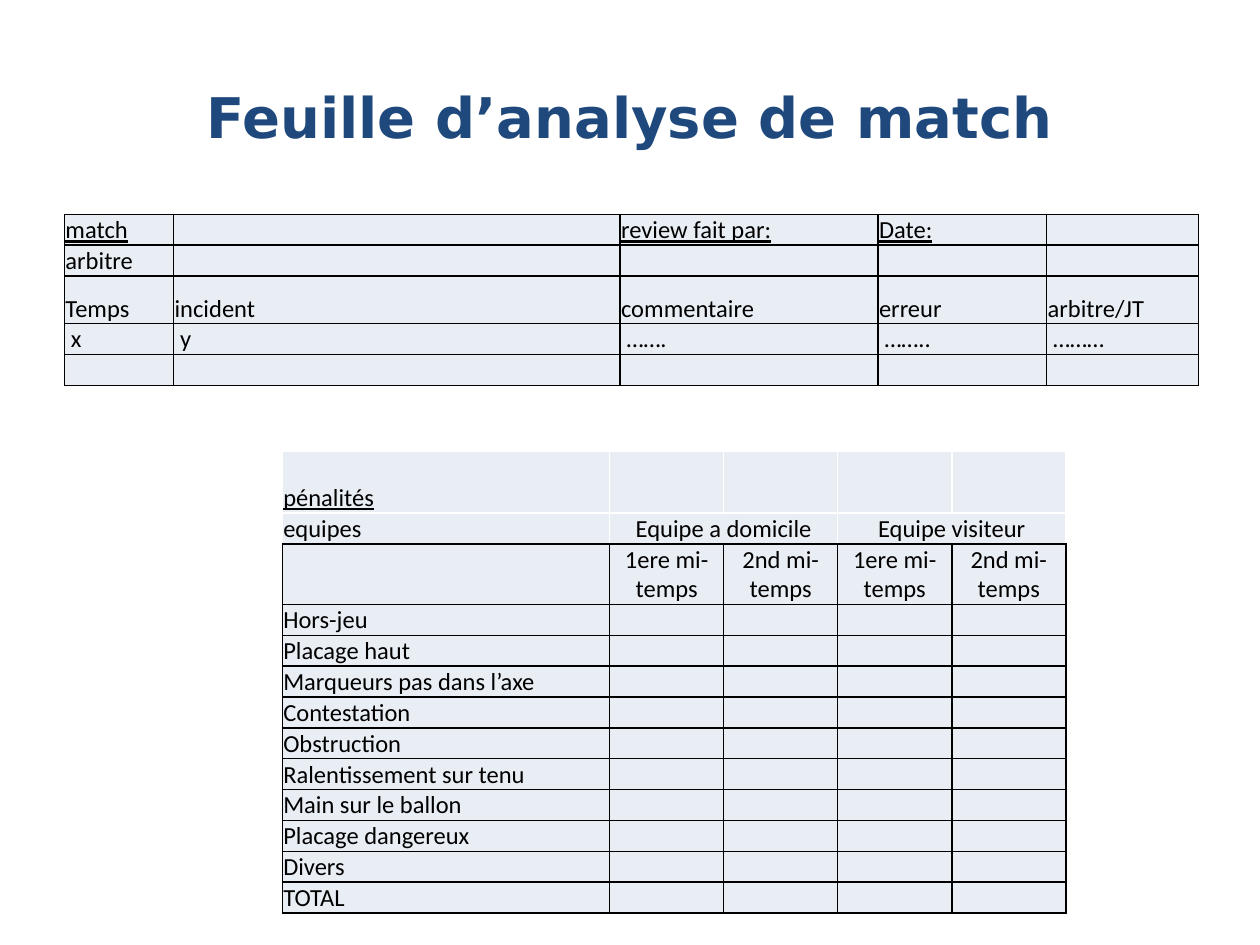
from dataclasses import dataclass

from lxml.etree import SubElement
from pptx import Presentation
from pptx.dml.color import RGBColor
from pptx.enum.text import MSO_ANCHOR, PP_ALIGN
from pptx.oxml.ns import qn
from pptx.util import Cm, Pt


@dataclass(frozen=True)
class Theme:
    """Colours, fonts and type sizes of the slide."""
    navy: str = "1F497D"
    black: str = "000000"
    white: str = "FFFFFF"
    cell: str = "E9EDF4"
    title_font: str = "DejaVu Sans"
    body_font: str = "Calibri"
    title_size: int = 32
    body_size: int = 14


THEME = Theme()
LINE_HEIGHT = 0.62
UNDERLINED = {"match", "review fait par:", "Date:", "pénalités"}

MATCH_ROWS = [
    ["match", "", "review fait par:", "Date:", ""],
    ["arbitre", "", "", "", ""],
    ["Temps", "incident", "commentaire", "erreur", "arbitre/JT"],
    [" x", " y", " …….", " ……..", " ………"],
    [""] * 5,
]
PENALTIES = [
    "Hors-jeu", "Placage haut", "Marqueurs pas dans l’axe", "Contestation",
    "Obstruction", "Ralentissement sur tenu", "Main sur le ballon",
    "Placage dangereux", "Divers", "TOTAL",
]
PENALTY_ROWS = [
    ["pénalités", "", "", "", ""],
    ["equipes", "Equipe a domicile", "", "Equipe visiteur", ""],
    [""] + ["1ere mi-temps", "2nd mi-temps"] * 2,
    *[[penalty, "", "", "", ""] for penalty in PENALTIES],
]


def write(frame, text, size=THEME.body_size, font=THEME.body_font,
          color=THEME.black, bold=False, underline=False, align=PP_ALIGN.LEFT):
    """Put one formatted paragraph in a text frame."""
    paragraph = frame.paragraphs[0]
    paragraph.alignment = align
    if not text:
        SubElement(paragraph._p, qn("a:endParaRPr"), sz=str(size * 100))
        return
    run = paragraph.add_run()
    run.text = text
    run.font.size = Pt(size)
    run.font.name = font
    run.font.bold = bold
    run.font.underline = underline
    run.font.color.rgb = RGBColor.from_string(color)


def draw_borders(cell, top, bottom, sides):
    """Give a cell one-point borders in the given colours."""
    properties = cell._tc.get_or_add_tcPr()
    for edge, color in zip("LRTB", (sides, sides, top, bottom)):
        line = SubElement(properties, qn(f"a:ln{edge}"), w=str(Pt(1)))
        fill = SubElement(line, qn("a:solidFill"))
        SubElement(fill, qn("a:srgbClr"), val=color)


def add_title(slide, text):
    """Place and fill the title placeholder."""
    title = slide.shapes.title
    title.left, title.top = Cm(1.27), Cm(0.76)
    title.width, title.height = Cm(22.86), Cm(3.18)
    title.text_frame.vertical_anchor = MSO_ANCHOR.MIDDLE
    write(title.text_frame, text, size=THEME.title_size, font=THEME.title_font,
          color=THEME.navy, bold=True, align=PP_ALIGN.CENTER)


def add_grid(slide, rows, left, top, widths, heights, white_rows=0):
    """Add a table whose first white_rows rows have white borders."""
    table = slide.shapes.add_table(
        len(rows), len(widths), Cm(left), Cm(top),
        Cm(sum(widths)), Cm(sum(heights))).table
    table.first_row = table.horz_banding = False
    for column, width in zip(table.columns, widths):
        column.width = Cm(width)
    for row, height in zip(table.rows, heights):
        row.height = Cm(height)
    for r, texts in enumerate(rows):
        sides = THEME.white if r < white_rows else THEME.black
        bottom = THEME.white if r + 1 < white_rows else THEME.black
        top_color = THEME.white if r < white_rows else THEME.black
        for c, text in enumerate(texts):
            cell = table.cell(r, c)
            cell.margin_left = cell.margin_right = cell.margin_top = Cm(0.02)
            cell.margin_bottom = Cm(0)
            cell.vertical_anchor = MSO_ANCHOR.BOTTOM
            draw_borders(cell, top_color, bottom, sides)
            cell.fill.solid()
            cell.fill.fore_color.rgb = RGBColor.from_string(THEME.cell)
            centred = white_rows and c > 0
            write(cell.text_frame, text, underline=text in UNDERLINED,
                  align=PP_ALIGN.CENTER if centred else PP_ALIGN.LEFT)
    return table


def main():
    """Build the match analysis sheet."""
    presentation = Presentation()
    presentation.slide_width, presentation.slide_height = Cm(25.4), Cm(19.05)
    slide = presentation.slides.add_slide(presentation.slide_layouts[5])
    add_title(slide, "Feuille d’analyse de match")
    penalties = add_grid(
        slide, PENALTY_ROWS, 5.69, 9.1, [6.6] + [2.3] * 4,
        [1.24, LINE_HEIGHT, 1.22] + [LINE_HEIGHT] * len(PENALTIES),
        white_rows=2)
    for first in (1, 3):
        penalties.cell(1, first).merge(penalties.cell(1, first + 1))
    add_grid(slide, MATCH_ROWS, 1.3, 4.32, [2.2, 9, 5.2, 3.4, 3.06],
             [LINE_HEIGHT] * 2 + [0.96] + [LINE_HEIGHT] * 2)
    presentation.save("out.pptx")


if __name__ == "__main__":
    main()
